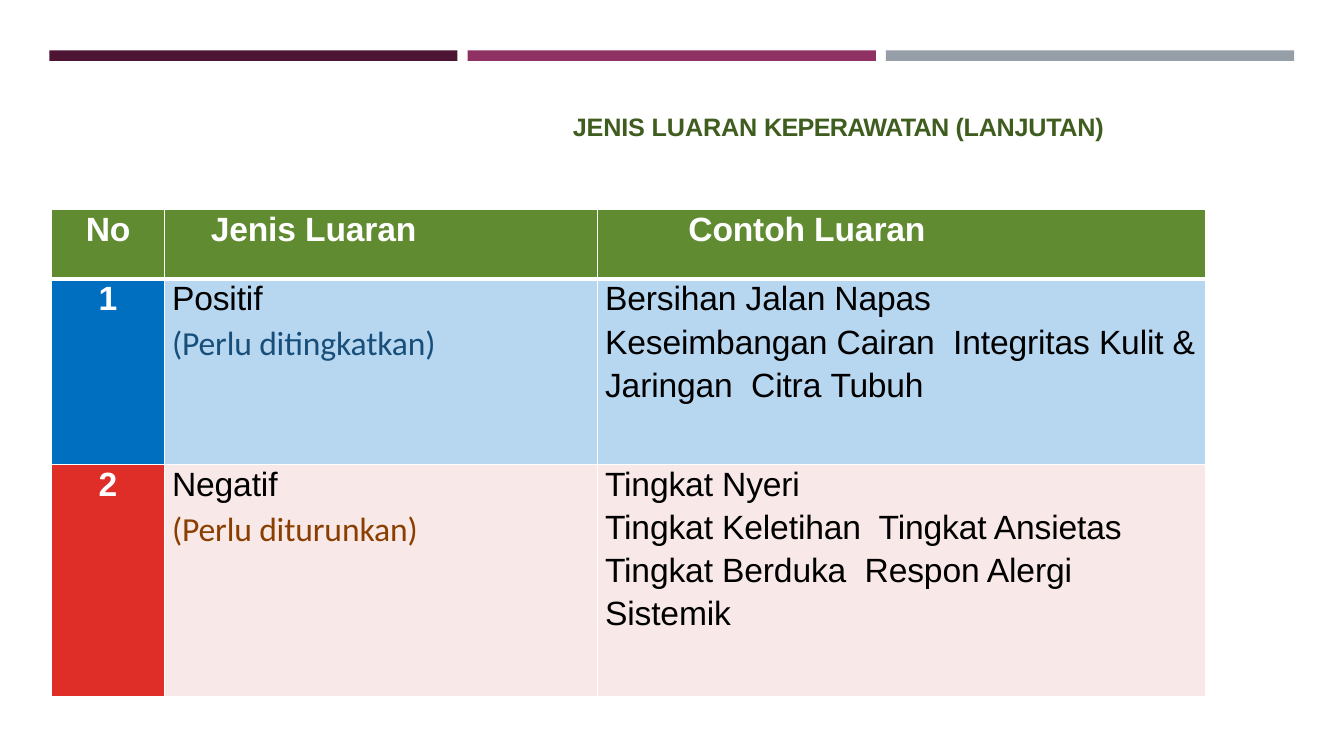
from dataclasses import dataclass

from lxml.etree import SubElement
from pptx import Presentation
from pptx.dml.color import RGBColor
from pptx.enum.shapes import MSO_SHAPE
from pptx.enum.text import MSO_ANCHOR, MSO_AUTO_SIZE, PP_ALIGN
from pptx.oxml.ns import qn
from pptx.util import Pt


@dataclass(frozen=True)
class Theme:
    bars: tuple = ("4D1434", "903163", "969FA7")
    white: str = "FFFFFF"
    black: str = "000000"
    title: str = "405D20"
    header: str = "608B30"
    positive: str = "006FC0"
    positive_pale: str = "B7D6F0"
    positive_note: str = "174F7A"
    negative: str = "DF2D28"
    negative_pale: str = "F8E8E8"
    negative_note: str = "8A3E00"
    font: str = "Arial"
    note_font: str = "Calibri"
    title_size: int = 18
    table_size: int = 24


THEME = Theme()
THIN, THICK = 1, 3


@dataclass(frozen=True)
class Line:
    """One paragraph: runs are (text, letter spacing) pairs; lengths in points."""
    runs: tuple
    color: str = THEME.black
    bold: bool = False
    font: str = THEME.font
    size: int = THEME.table_size
    indent: float = 0
    before: float = 0.9
    spacing: float = 1.0
    align: PP_ALIGN = PP_ALIGN.LEFT


def write_lines(frame, lines):
    for number, line in enumerate(lines):
        paragraph = frame.add_paragraph() if number else frame.paragraphs[0]
        paragraph.alignment = line.align
        paragraph.space_before = Pt(line.before)
        paragraph.line_spacing = line.spacing
        properties = paragraph._p.get_or_add_pPr()
        properties.set("marL", str(Pt(line.indent)))
        properties.set("indent", "0")
        for text, letter_spacing in line.runs:
            run = paragraph.add_run()
            run.text = text
            run.font.name = line.font
            run.font.size = Pt(line.size)
            run.font.bold = line.bold
            run.font.color.rgb = RGBColor.from_string(line.color)
            run._r.get_or_add_rPr().set("spc", str(round(letter_spacing * 100)))


def add_bars(slide, left, top, width, height, gap=7.2):
    bar_width = (width - gap * (len(THEME.bars) - 1)) / len(THEME.bars)
    for index, color in enumerate(THEME.bars):
        bar = slide.shapes.add_shape(
            MSO_SHAPE.RECTANGLE, Pt(left + index * (bar_width + gap)), Pt(top),
            Pt(bar_width), Pt(height))
        bar.shadow.inherit = False
        bar.fill.solid()
        bar.fill.fore_color.rgb = RGBColor.from_string(color)
        bar.line.fill.background()


def add_title(slide, left, top, width, height):
    title = slide.shapes.title
    title.left, title.top = Pt(left), Pt(top)
    title.width, title.height = Pt(width), Pt(height)
    frame = title.text_frame
    frame.word_wrap = True
    frame.auto_size = MSO_AUTO_SIZE.NONE
    frame.vertical_anchor = MSO_ANCHOR.TOP
    frame.margin_left = frame.margin_right = frame.margin_bottom = 0
    frame.margin_top = Pt(0.9)
    runs = (("JENIS LUARAN ", -0.1), ("KEPERAWATAN ", -0.5), ("(LANJUTAN)", -0.2))
    write_lines(frame, [Line(runs, THEME.title, bold=True, size=THEME.title_size,
                             indent=1, before=1)])


def set_borders(cell, top, bottom):
    properties = cell._tc.get_or_add_tcPr()
    sides = (("a:lnL", THIN), ("a:lnR", THIN), ("a:lnT", top), ("a:lnB", bottom))
    for position, (tag, weight) in enumerate(sides):
        border = SubElement(properties, qn(tag), w=str(Pt(weight)))
        fill = SubElement(border, qn("a:solidFill"))
        SubElement(fill, qn("a:srgbClr"), val=THEME.white)
        properties.insert(position, border)


def heading(text, letter_spacing=-0.1, **options):
    return Line(((text, letter_spacing),), THEME.white, bold=True, **options)


def outcome_row(number, kind, note, examples, strong, pale, note_color):
    """Cells of one outcome type, each with its fill and its lines."""
    first_example, other_examples = examples
    return (
        (strong, [heading(number, 0, align=PP_ALIGN.CENTER)]),
        (pale, [Line(((kind, -0.1),), indent=5.3),
                Line(((note, -0.1),), note_color, font=THEME.note_font,
                     indent=5.3, before=4.3)]),
        (pale, [Line(((first_example, -0.1),), indent=5.5),
                Line(other_examples, indent=5.5, before=0, spacing=1.15)]),
    )


def outcome_rows():
    header = (
        heading("No", align=PP_ALIGN.CENTER, before=0.8),
        heading("Jenis Luaran", indent=33, before=0.8),
        heading("Contoh Luaran", indent=65, before=0.8),
    )
    positive_examples = (
        "Bersihan Jalan Napas",
        (("Keseimbangan Cairan  Integritas Kulit ", -0.1), ("& ", 0),
         ("Jaringan  Citra ", -0.1), ("Tubuh", -0.2)))
    negative_examples = (
        "Tingkat Nyeri",
        (("Tingkat Keletihan  Tingkat Ansietas  Tingkat Berduka  "
          "Respon Alergi Sistemik", -0.1),))
    return (
        [(THEME.header, [line]) for line in header],
        outcome_row("1", "Positif", "(Perlu ditingkatkan)", positive_examples,
                    THEME.positive, THEME.positive_pale, THEME.positive_note),
        outcome_row("2", "Negatif", "(Perlu diturunkan)", negative_examples,
                    THEME.negative, THEME.negative_pale, THEME.negative_note),
    )


def add_outcome_table(slide, left, top, width, height):
    rows = outcome_rows()
    table = slide.shapes.add_table(
        len(rows), len(rows[0]), Pt(left), Pt(top), Pt(width), Pt(height)).table
    table.first_row = table.horz_banding = False
    for column, share in zip(table.columns, (0.098, 0.375, 0.527)):
        column.width = Pt(width * share)
    for row, share in zip(table.rows, (0.143, 0.381, 0.476)):
        row.height = Pt(height * share)
    for row_index, cells in enumerate(rows):
        for column_index, (color, lines) in enumerate(cells):
            cell = table.cell(row_index, column_index)
            cell.margin_left = cell.margin_right = cell.margin_bottom = 0
            cell.margin_top = Pt(0.9)
            cell.fill.solid()
            cell.fill.fore_color.rgb = RGBColor.from_string(color)
            set_borders(cell, top=THICK if row_index == 1 else THIN,
                        bottom=THICK if row_index == 0 else THIN)
            write_lines(cell.text_frame, lines)


def main():
    presentation = Presentation()
    presentation.slide_width, presentation.slide_height = Pt(960), Pt(540)
    slide = presentation.slides.add_slide(presentation.slide_layouts[5])

    # Three-colour band across the top
    add_bars(slide, 35.2, 36, 889.2, 7.5)
    # Slide title
    add_title(slide, 408.2, 78.5, 389.5, 23.8)
    # Types of nursing outcome
    add_outcome_table(slide, 36.8, 149.8, 824.4, 347.8)

    presentation.save("out.pptx")


if __name__ == "__main__":
    main()
